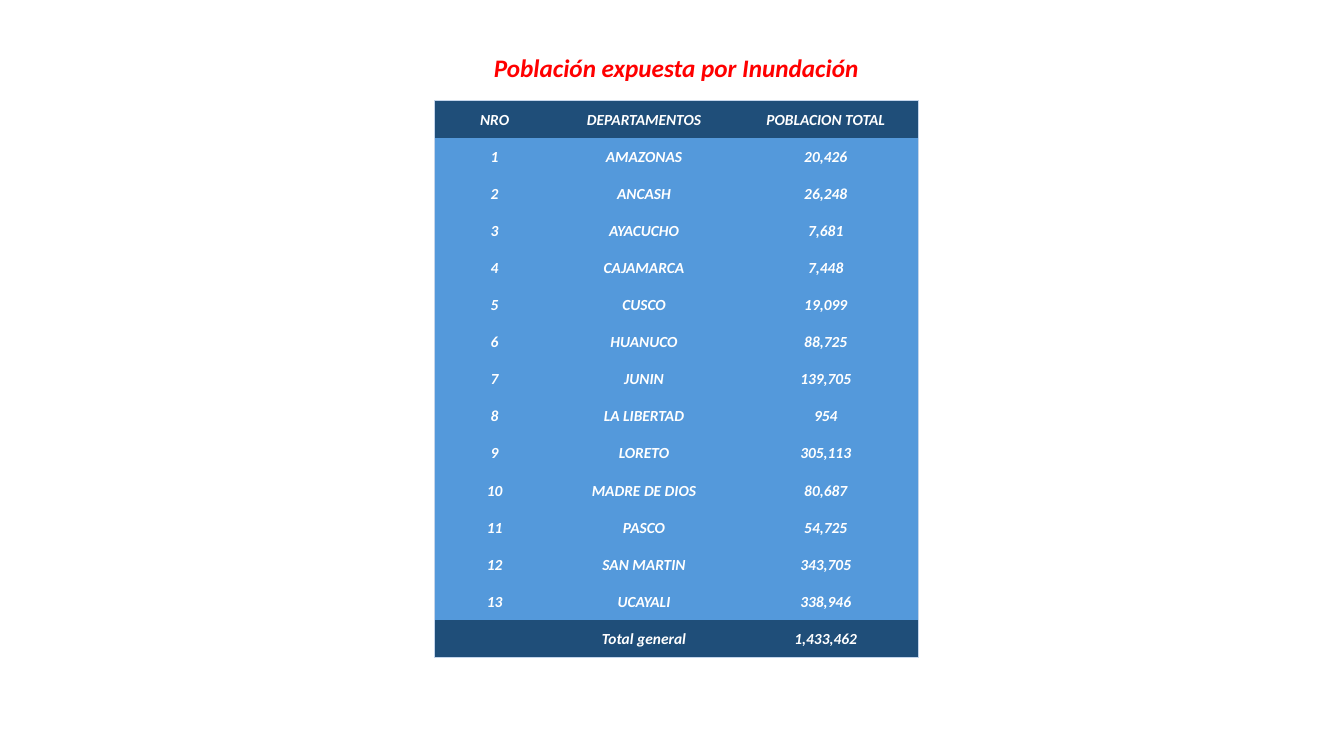
from lxml import etree
from pptx import Presentation
from pptx.dml.color import RGBColor
from pptx.enum.text import MSO_ANCHOR, MSO_AUTO_SIZE, PP_ALIGN
from pptx.oxml.ns import qn
from pptx.util import Cm, Pt

CENTER = PP_ALIGN.CENTER
MIDDLE = MSO_ANCHOR.MIDDLE
FIT_SHAPE = MSO_AUTO_SIZE.SHAPE_TO_FIT_TEXT

TITLE = "Población expuesta por Inundación"
HEADER = ("NRO", "DEPARTAMENTOS", "POBLACION TOTAL")
DEPARTMENTS = [
    ("AMAZONAS", "20,426"),
    ("ANCASH", "26,248"),
    ("AYACUCHO", "7,681"),
    ("CAJAMARCA", "7,448"),
    ("CUSCO", "19,099"),
    ("HUANUCO", "88,725"),
    ("JUNIN", "139,705"),
    ("LA LIBERTAD", "954"),
    ("LORETO", "305,113"),
    ("MADRE DE DIOS", "80,687"),
    ("PASCO", "54,725"),
    ("SAN MARTIN", "343,705"),
    ("UCAYALI", "338,946"),
]
TOTAL = ("", "Total general", "1,433,462")

FONT = "Calibri"
RED, WHITE = "FF0000", "FFFFFF"
DARK, BLUE, EDGE = "1F4E79", "5499DB", "C4D5EB"
LEFT, TOP = 10.95, 2.54
COL_WIDTHS = (3.03, 4.5, 4.66)
ROW_HEIGHT = 0.935
TITLE_WIDTH, TITLE_HEIGHT, TITLE_TOP = 9.78, 1.02, 1.2


def rgb(color):
    return RGBColor.from_string(color)


def write(tf, text, size, color):
    tf.text = text
    p = tf.paragraphs[0]
    p.alignment = CENTER
    for r in p.runs:
        r.font.name = FONT
        r.font.size = Pt(size)
        r.font.bold = r.font.italic = True
        r.font.color.rgb = rgb(color)


def set_border(cell, side, visible):
    tc_pr = cell._tc.get_or_add_tcPr()
    ln = etree.SubElement(tc_pr, qn(f"a:ln{side}"), w=str(Pt(0.5)))
    if visible:
        fill = etree.SubElement(ln, qn("a:solidFill"))
        etree.SubElement(fill, qn("a:srgbClr"), val=EDGE)
    else:
        etree.SubElement(ln, qn("a:noFill"))


def add_title(slide):
    sp = slide.shapes.title
    center = LEFT + sum(COL_WIDTHS) / 2
    sp.left, sp.top = Cm(center - TITLE_WIDTH / 2), Cm(TITLE_TOP)
    sp.width, sp.height = Cm(TITLE_WIDTH), Cm(TITLE_HEIGHT)
    tf = sp.text_frame
    tf.word_wrap = False
    tf.auto_size = FIT_SHAPE
    tf.vertical_anchor = MIDDLE
    write(tf, TITLE, 18, RED)


def add_population_table(slide):
    numbered = [(str(n), *row) for n, row in enumerate(DEPARTMENTS, 1)]
    rows = [HEADER, *numbered, TOTAL]
    last_row, last_col = len(rows) - 1, len(HEADER) - 1
    table = slide.shapes.add_table(
        len(rows), len(HEADER), Cm(LEFT), Cm(TOP),
        Cm(sum(COL_WIDTHS)), Cm(ROW_HEIGHT * len(rows))).table
    table.horz_banding = False
    for col, width in zip(table.columns, COL_WIDTHS):
        col.width = Cm(width)
    for i, row in enumerate(rows):
        table.rows[i].height = Cm(ROW_HEIGHT)
        for j, text in enumerate(row):
            cell = table.cell(i, j)
            cell.margin_left = cell.margin_right = cell.margin_top = Cm(0.02)
            cell.margin_bottom = 0
            cell.vertical_anchor = MIDDLE
            write(cell.text_frame, text, 11, WHITE)
            edges = {"L": j == 0, "R": j == last_col,
                     "T": i == 0, "B": i == last_row}
            for side, visible in edges.items():
                set_border(cell, side, visible)
            cell.fill.solid()
            cell.fill.fore_color.rgb = rgb(DARK if i in (0, last_row) else BLUE)


def main():
    prs = Presentation()
    prs.slide_width, prs.slide_height = Cm(33.87), Cm(19.05)
    slide = prs.slides.add_slide(prs.slide_layouts.get_by_name("Title Only"))
    add_title(slide)
    add_population_table(slide)
    prs.save("out.pptx")


if __name__ == "__main__":
    main()
